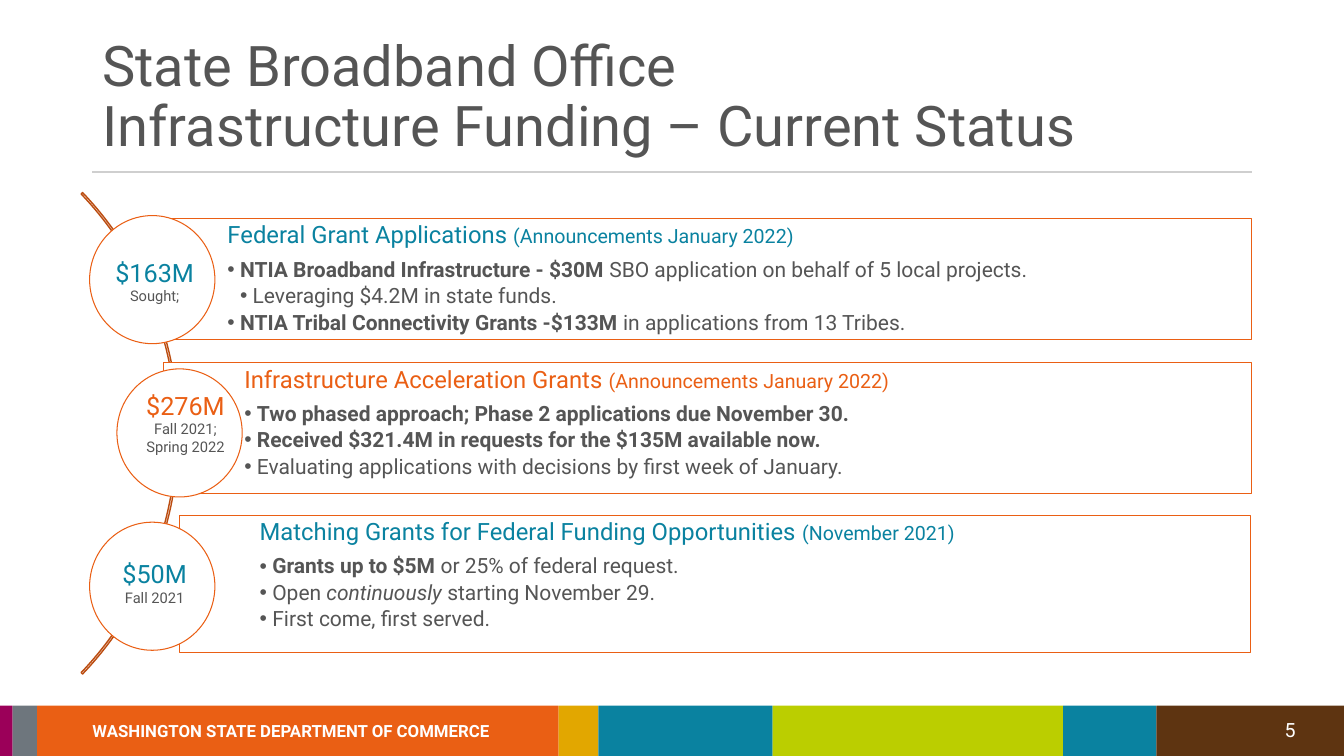
from pptx import Presentation
from pptx.dml.color import RGBColor
from pptx.enum import shapes, text
from pptx.oxml import ns, xmlchemy as xc
from pptx.util import Pt

KIND = shapes.MSO_SHAPE
ANCHOR = text.MSO_ANCHOR
ALIGN = text.PP_ALIGN
FIT = text.MSO_AUTO_SIZE

# Theme: colours, then text styles as (size, colour, bold, italic)
HUE = dict(orange="EA5F14", rust="BB4C10", gold="E2A700", teal="0A82A0",
           plum="9B0059", lime="BBCE00", brown="5E3411", slate="6E767D",
           ink="555555", rule="CFCFCF", white="FFFFFF")
HUE = {name: RGBColor.from_string(code) for name, code in HUE.items()}
STYLE = {
    "title": (40, "ink", False, False),
    "body": (15, "ink", False, False),
    "strong": (15, "ink", True, False),
    "slant": (15, "ink", False, True),
    "note": (10.5, "ink", False, False),
    "footer": (12, "white", True, False),
    "page": (14, "white", False, False),
}
for hue in ("teal", "orange"):
    STYLE[hue + " head"] = (17, hue, False, False)
    STYLE[hue + " date"] = (14, hue, False, False)
    STYLE[hue + " sum"] = (18, hue, False, False)


def paint(shape, fill=None, line=None, width=0.75):
    if fill:
        shape.fill.solid()
        shape.fill.fore_color.rgb = HUE[fill]
    else:
        shape.fill.background()
    if line:
        shape.line.color.rgb = HUE[line]
        shape.line.width = Pt(width)
    else:
        shape.line.fill.background()


def write(frame, rows, form, gaps=(0, 0), **look):
    """Each row is (level, [(words, style), ...]); levels above 0 are bulleted."""
    for key, val in look.items():
        setattr(frame, key, val)
    for num, (level, runs) in enumerate(rows):
        par = frame.paragraphs[0] if num == 0 else frame.add_paragraph()
        form = {**form, "level": level, "space_before": Pt(0),
                "space_after": Pt(gaps[min(level, 1)])}
        for key, val in form.items():
            setattr(par, key, val)
        props = par._p.get_or_add_pPr()
        props.set("marL", str(Pt(9 * level)))
        props.set("indent", str(Pt(-9 if level else 0)))
        mark = xc.OxmlElement("a:buChar" if level else "a:buNone")
        if level:
            mark.set("char", "•")
        props.append(mark)
        for words, style in runs:
            run = par.add_run()
            run.text = words
            size, hue, bold, slant = STYLE[style]
            face = dict(name="Roboto", size=Pt(size), bold=bold, italic=slant)
            for key, val in face.items():
                setattr(run.font, key, val)
            run.font.color.rgb = HUE[hue]


deck = Presentation()
deck.slide_width, deck.slide_height = Pt(960), Pt(540)
slide = deck.slides.add_slide(deck.slide_layouts[4])
items = slide.shapes
title, *bodies, spare = list(slide.placeholders)
spare._element.getparent().remove(spare._element)

# Title and rule
title.left, title.top, title.width, title.height = map(Pt, (66, 22.5, 828, 95.5))
lines = ["State Broadband Office", "Infrastructure Funding – Current Status"]
write(title.text_frame, [(0, [(words, "title")]) for words in lines],
      dict(alignment=ALIGN.LEFT, line_spacing=0.9),
      vertical_anchor=ANCHOR.MIDDLE, auto_size=FIT.NONE)
rule = items.add_connector(shapes.MSO_CONNECTOR.STRAIGHT, Pt(66), Pt(123), Pt(894), Pt(123))
rule.line.color.rgb = HUE["rule"]
rule.line.width = Pt(1)
rule._element.spPr.append(xc.OxmlElement("a:effectLst"))

# Footer bars: each ends where the next begins
bars = [("plum", 9), ("slate", 26.5), ("orange", 399), ("gold", 427.5),
        ("teal", 552), ("lime", 759.5), ("teal", 826), ("brown", 960)]
blocks = []
left = 0
for hue, right in bars:
    blocks.append((hue, left, 500.5, right - left, 39.5))
    left = right
blocks.append(("white", 0, 497.5, 960, 6.5))
for hue, *place in blocks:
    bar = items.add_shape(KIND.RECTANGLE, *map(Pt, place))
    bar.shadow.inherit = False
    paint(bar, hue)

# Footer text
for words, style, place in [
        ("WASHINGTON STATE DEPARTMENT OF COMMERCE", "footer", (59, 511, 304.5, 21.5)),
        ("5", "page", (901, 509, 31.5, 24.5))]:
    label = items.add_textbox(*map(Pt, place))
    align = ALIGN.RIGHT if style == "page" else ALIGN.LEFT
    write(label.text_frame, [(0, [(words, style)])], dict(alignment=align), word_wrap=False)

# Arc behind the cards
arc = items.add_shape(KIND.BLOCK_ARC, Pt(-353.5), Pt(63.5), Pt(481), Pt(492))
arc.shadow.inherit = False
for num, val in enumerate((189, 27, 0.003)):
    arc.adjustments[num] = val
paint(arc, None, "rust", 1)
items._spTree.insert(2, arc._element)

# Funding cards: box, circle and label
cards = [
    dict(hue="teal", box=(105, 156, 789, 86.5), ring=(64, 154), tag=(66, 180, 89, 42),
         head="Federal Grant Applications ", date="(Announcements January 2022)",
         sum="$163M", notes=["Sought;"], rows=[
             (1, [("NTIA Broadband Infrastructure - $30M ", "strong"),
                  ("SBO application on behalf of 5 local projects.", "body")]),
             (2, [("Leveraging $4.2M in state funds.", "body")]),
             (1, [("NTIA Tribal Connectivity Grants -$133M ", "strong"),
                  ("in applications from 13 Tribes.", "body")])]),
    dict(hue="orange", box=(117, 259, 777, 93.5), ring=(83.5, 263.5), tag=(88, 275, 89, 54.5),
         head="Infrastructure Acceleration Grants ", date="(Announcements January 2022)",
         sum="$276M", notes=["Fall 2021;", "Spring 2022"], rows=[
             (1, [("Two phased approach; Phase 2 applications due November 30.", "strong")]),
             (1, [("Received $321.4M in requests for the $135M available now.", "strong")]),
             (1, [("Evaluating applications with decisions by first week of January.", "body")])]),
    dict(hue="teal", box=(128, 368, 765.5, 98), ring=(64, 373), tag=(66, 395.5, 89, 42),
         head="Matching Grants for Federal Funding Opportunities ", date="(November 2021)",
         sum="$50M", notes=["Fall 2021"], rows=[
             (1, [("Grants up to $5M ", "strong"), ("or 25% of federal request.", "body")]),
             (1, [("Open ", "body"), ("continuously", "slant"),
                  (" starting November 29.", "body")]),
             (1, [("First come, first served.", "body")])]),
]
for card, body in zip(cards, bodies):
    hue = card["hue"]
    body.left, body.top, body.width, body.height = map(Pt, card["box"])
    paint(body, "white", "orange")
    head = (0, [(card["head"], hue + " head"), (card["date"], hue + " date")])
    write(body.text_frame, [head] + card["rows"],
          dict(alignment=ALIGN.LEFT, line_spacing=0.9), (7, 2.7),
          vertical_anchor=ANCHOR.TOP, auto_size=FIT.NONE, margin_left=Pt(57.5),
          margin_top=Pt(3.6), margin_right=Pt(3.6), margin_bottom=Pt(3.6))

    ring = items.add_shape(KIND.OVAL, *map(Pt, card["ring"]), Pt(89.5), Pt(91.5))
    ring.shadow.inherit = False
    paint(ring, "white", "orange")

    tag = items.add_textbox(*map(Pt, card["tag"]))
    rows = [(0, [(card["sum"], hue + " sum")])]
    rows += [(0, [(words, "note")]) for words in card["notes"]]
    write(tag.text_frame, rows, dict(alignment=ALIGN.CENTER),
          word_wrap=True, auto_size=FIT.SHAPE_TO_FIT_TEXT)

deck.save("out.pptx")
